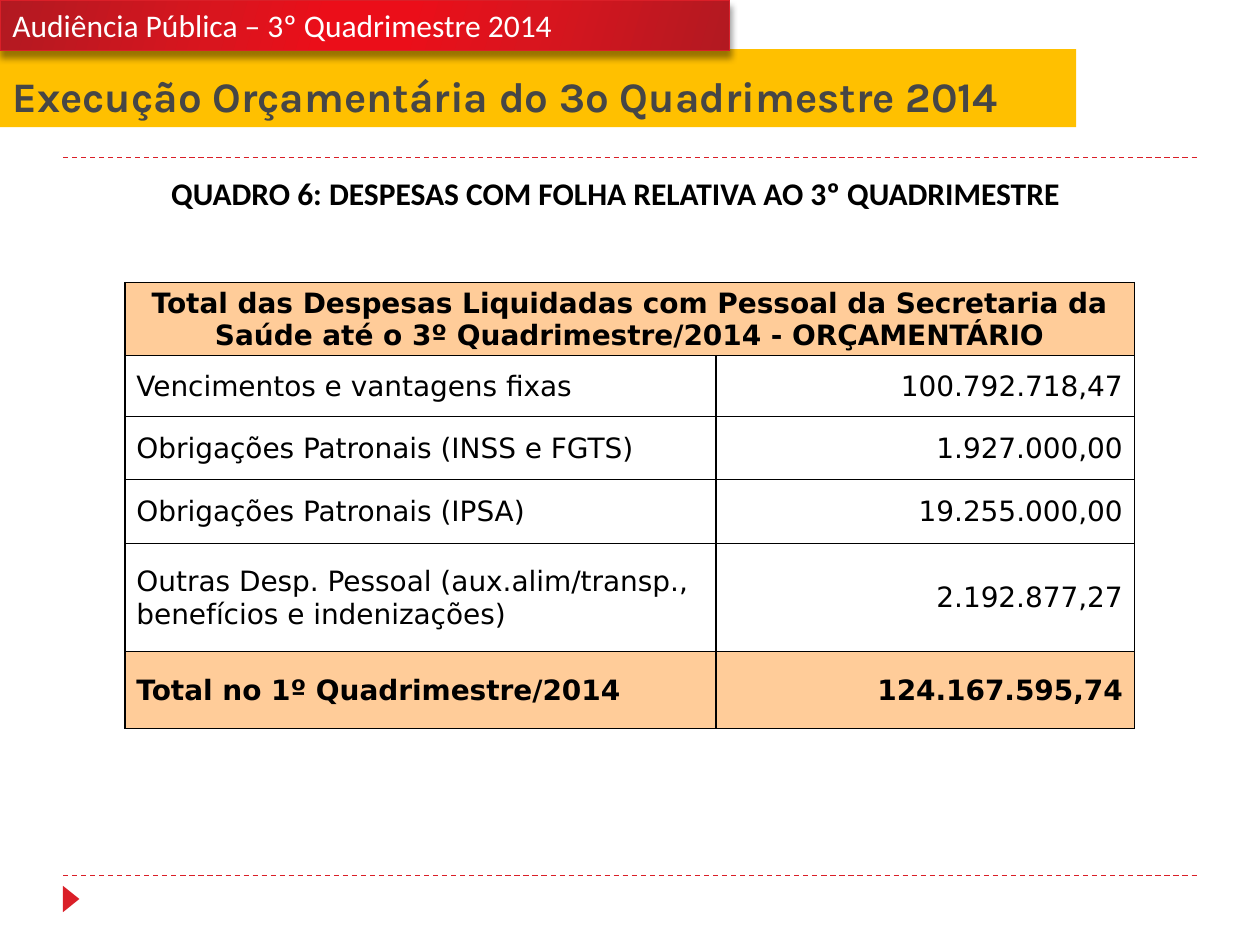
import lxml.etree
import pptx
import pptx.dml.color
import pptx.enum.dml
import pptx.enum.shapes
import pptx.enum.text
import pptx.oxml
import pptx.oxml.ns
import pptx.util

Pt = pptx.util.Pt
ALIGN = pptx.enum.text.PP_ALIGN
ANCHOR = pptx.enum.text.MSO_ANCHOR
SHAPE = pptx.enum.shapes.MSO_SHAPE
RED, YELLOW, PEACH = "DA1F28", "FFC000", "FFCC99"
BLACK, WHITE, GRAY = "000000", "FFFFFF", "464646"

GRADIENT = [(0, "B21921"), (30, "D9151E"), (45, "EB0E19"),
            (55, "EB0E19"), (73, "D9151E"), (100, "B21921")]
TABLE_TITLE = ("Total das Despesas Liquidadas com Pessoal da Secretaria da "
               "Saúde até o 3º Quadrimestre/2014 - ORÇAMENTÁRIO")
EXPENSES = [
    ("Vencimentos e vantagens fixas", "100.792.718,47"),
    ("Obrigações Patronais (INSS e FGTS)", "1.927.000,00"),
    ("Obrigações Patronais (IPSA)", "19.255.000,00"),
    ("Outras Desp. Pessoal (aux.alim/transp., benefícios e indenizações)",
     "2.192.877,27"),
    ("Total no 1º Quadrimestre/2014", "124.167.595,74"),
]
COLUMN_WIDTHS = [337.7, 239]
ROW_HEIGHTS = [41.8, 34.6, 36, 36.7, 61.9, 44]


def color(value):
    return pptx.dml.color.RGBColor.from_string(value)


def points(box):
    return [Pt(length) for length in box]


def drawing_xml(tag, content=""):
    """Parse one element of the drawing namespace."""
    namespace = pptx.oxml.ns.nsdecls("a")
    return pptx.oxml.parse_xml(f"<a:{tag} {namespace}>{content}</a:{tag}>")


def write_text(text_frame, text, size, font, text_color, bold=False,
               align=ALIGN.LEFT, anchor=ANCHOR.TOP):
    text_frame.text = text
    text_frame.word_wrap = True
    text_frame.vertical_anchor = anchor
    paragraph = text_frame.paragraphs[0]
    paragraph.alignment = align
    for run in paragraph.runs:
        run.font.size = Pt(size)
        run.font.name = font
        run.font.bold = bold
        run.font.color.rgb = color(text_color)


def add_dashed_rule(slide, left, top, width):
    rule = slide.shapes.add_connector(
        pptx.enum.shapes.MSO_CONNECTOR.STRAIGHT,
        *points((left, top, left + width, top)))
    rule.line.color.rgb = color(RED)
    rule.line.width = Pt(0.75)
    rule.line.dash_style = pptx.enum.dml.MSO_LINE.DASH
    rule._element.spPr.append(drawing_xml("effectLst"))


def add_corner_marker(slide, box):
    marker = slide.shapes.add_shape(SHAPE.ISOSCELES_TRIANGLE, *points(box))
    marker.rotation = 90
    marker.shadow.inherit = False
    marker.fill.solid()
    marker.fill.fore_color.rgb = color(RED)
    marker.line.fill.background()


def place_title(slide, box):
    title = slide.shapes.title
    title.left, title.top, title.width, title.height = points(box)
    title.fill.solid()
    title.fill.fore_color.rgb = color(YELLOW)
    write_text(title.text_frame, "Execução Orçamentária do 3º Quadrimestre 2014",
               24, "Karla", GRAY, bold=True, anchor=ANCHOR.BOTTOM)


def add_event_banner(slide, box):
    banner = slide.shapes.add_shape(SHAPE.RECTANGLE, *points(box))
    banner.line.color.rgb = color(RED)
    banner.line.width = Pt(0.75)
    banner.fill.gradient()
    gradient = banner._element.spPr.find(pptx.oxml.ns.qn("a:gradFill"))
    stops = "".join(f'<a:gs pos="{position * 1000}"><a:srgbClr val="{value}"/></a:gs>'
                    for position, value in GRADIENT)
    gradient.replace(gradient.find(pptx.oxml.ns.qn("a:gsLst")),
                     drawing_xml("gsLst", stops))
    gradient.find(pptx.oxml.ns.qn("a:lin")).set("ang", str(16 * 60000))
    banner._element.spPr.append(drawing_xml(
        "effectLst",
        f'<a:outerShdw blurRad="{Pt(4)}" dist="{Pt(3.4)}" dir="5400000" rotWithShape="0">'
        f'<a:srgbClr val="{BLACK}"><a:alpha val="40000"/></a:srgbClr></a:outerShdw>'))
    write_text(banner.text_frame, "Audiência Pública – 3º Quadrimestre 2014",
               18, "Calibri", WHITE)


def add_caption(slide, box):
    caption = slide.shapes.add_textbox(*points(box))
    write_text(caption.text_frame,
               "QUADRO 6: DESPESAS COM FOLHA RELATIVA AO 3º QUADRIMESTRE",
               18, "Calibri", BLACK, bold=True, align=ALIGN.CENTER)


def format_cell(cell, text, align, emphasized, left=0.7, right=0.7):
    write_text(cell.text_frame, text, 16, "DejaVu Sans", BLACK, emphasized, align)
    cell.vertical_anchor = ANCHOR.MIDDLE
    cell.margin_left, cell.margin_right = Pt(left), Pt(right)
    cell.margin_top, cell.margin_bottom = Pt(0.7), Pt(0)


def finish_cell(cell, emphasized):
    """Draw the borders, then the fill, which must follow them in the XML."""
    properties = cell._tc.get_or_add_tcPr()
    for side in ("lnL", "lnR", "lnT", "lnB"):
        border = drawing_xml(
            side, f'<a:solidFill><a:srgbClr val="{BLACK}"/></a:solidFill>')
        border.set("w", str(Pt(1)))
        properties.append(border)
    if emphasized:
        cell.fill.solid()
        cell.fill.fore_color.rgb = color(PEACH)
    else:
        cell.fill.background()


def add_expense_table(slide, box):
    table = slide.shapes.add_table(
        len(ROW_HEIGHTS), len(COLUMN_WIDTHS), *points(box)).table
    table.first_row = table.horz_banding = False
    for column, width in zip(table.columns, COLUMN_WIDTHS):
        column.width = Pt(width)
    for row, height in zip(table.rows, ROW_HEIGHTS):
        row.height = Pt(height)

    table.cell(0, 0).merge(table.cell(0, 1))
    format_cell(table.cell(0, 0), TABLE_TITLE, ALIGN.CENTER, True)
    last = len(EXPENSES)
    for index, (label, amount) in enumerate(EXPENSES, start=1):
        total = index == last
        format_cell(table.cell(index, 0), label, ALIGN.LEFT, total, left=6.5)
        format_cell(table.cell(index, 1), amount, ALIGN.RIGHT, total, right=6.5)
    for index, row in enumerate(table.rows):
        for cell in row.cells:
            finish_cell(cell, index in (0, last))


def main():
    presentation = pptx.Presentation()
    presentation.slide_width, presentation.slide_height = Pt(720), Pt(540)
    slide = presentation.slides.add_slide(
        presentation.slide_layouts.get_by_name("Title Only"))
    for top in (500.4, 90):
        add_dashed_rule(slide, 36, top, 648)
    add_corner_marker(slide, (33.1, 509, 15.1, 9.4))
    place_title(slide, (0, 28.1, 615, 44.6))
    add_event_banner(slide, (0, 0, 417, 29))
    add_caption(slide, (33.8, 96, 636, 29))
    add_expense_table(slide, (71.5, 161.5, sum(COLUMN_WIDTHS), sum(ROW_HEIGHTS)))
    presentation.save("out.pptx")


if __name__ == "__main__":
    main()
